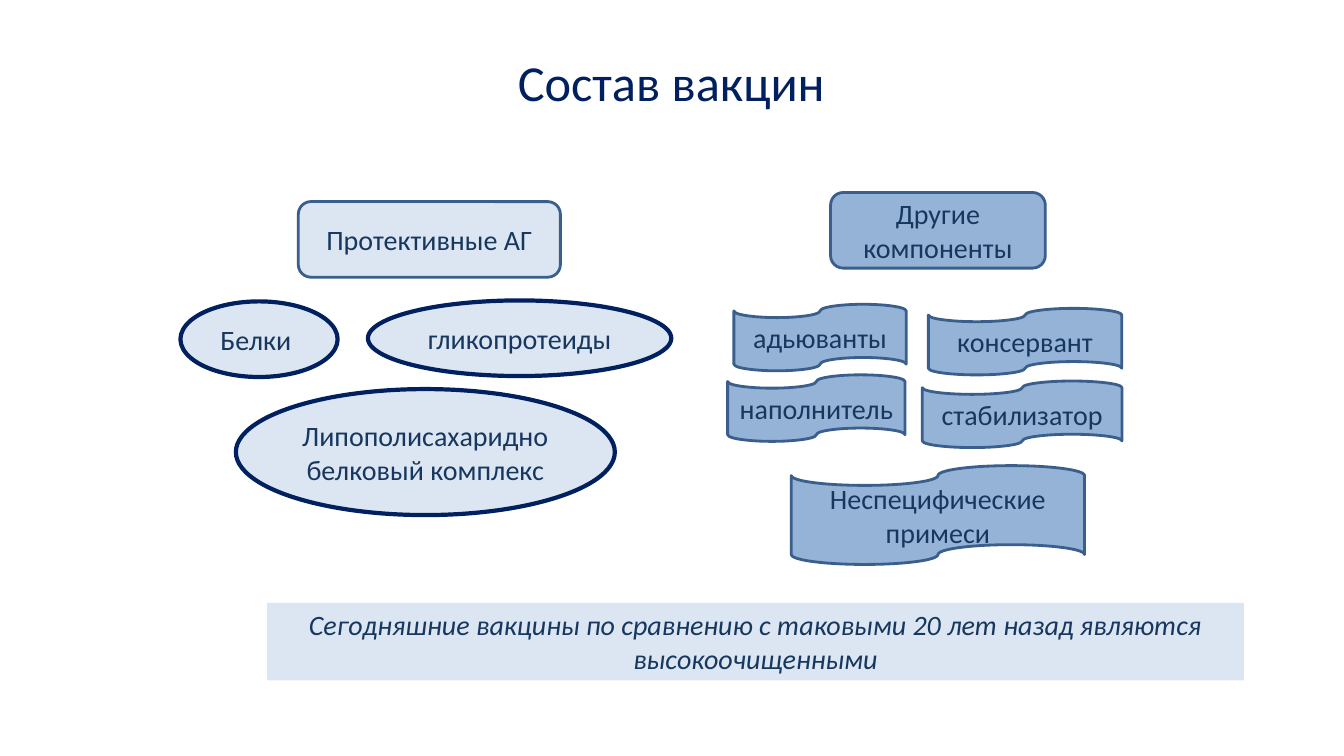
from pptx import Presentation
from pptx.util import Pt
from pptx.dml.color import RGBColor
from pptx.enum import shapes, text

NAVY = RGBColor(0x00, 0x20, 0x60)
INK = RGBColor(0x17, 0x37, 0x5E)
EDGE = RGBColor(0x3A, 0x5F, 0x8C)
PALE = RGBColor(0xDC, 0xE6, 0xF2)
BLUE = RGBColor(0x95, 0xB3, 0xD7)

KIND = shapes.MSO_SHAPE
MID = text.MSO_ANCHOR.MIDDLE
TOP = text.MSO_ANCHOR.TOP
BODY = {"name": "Calibri", "size": Pt(20)}
HEAD = {"name": "Calibri", "size": Pt(36)}

TITLE = ("Состав вакцин", (270.7, 25.9, 417.6, 64.1))
GROUPS = [
    (KIND.ROUNDED_RECTANGLE, PALE, EDGE, 2, [
        ("Протективные АГ", (213.1, 144, 187.2, 54)),
    ]),
    (KIND.ROUNDED_RECTANGLE, BLUE, EDGE, 2, [
        ("Другие компоненты", (593.3, 137.5, 153.4, 54)),
    ]),
    (KIND.OVAL, PALE, NAVY, 3, [
        ("Белки ", (128.9, 215.3, 112.3, 54)),
        ("гликопротеиды", (262.8, 214.6, 216.7, 54)),
        ("Липополисахаридно\vбелковый комплекс", (168.5, 277.9, 270.7, 90)),
    ]),
    (KIND.FLOWCHART_PUNCHED_TAPE, BLUE, EDGE, 2, [
        ("адьюванты", (524.2, 217.4, 123.1, 47.5)),
        ("консервант", (663.1, 220.3, 138.2, 47.5)),
        ("наполнитель", (519.8, 267.8, 126.7, 47.5)),
        ("стабилизатор", (658.8, 272.2, 142.6, 47.5)),
        ("Неспецифические примеси", (565.2, 332.6, 209.5, 70.6)),
    ]),
]
NOTE = ("Сегодняшние вакцины по сравнению с таковыми 20 лет назад "
        "являются высокоочищенными", (190.8, 430.6, 697.7, 55.4))


def write(shape, words, look, ink, anchor=MID):
    frame = shape.text_frame
    frame.text = words
    frame.word_wrap = True
    frame.vertical_anchor = anchor
    para = frame.paragraphs[0]
    para.alignment = text.PP_ALIGN.CENTER
    for run in para.runs:
        for key, value in look.items():
            setattr(run.font, key, value)
        run.font.color.rgb = ink


def draw(kind, box, fill, edge=None, width=0):
    shape = slide.shapes.add_shape(kind, *map(Pt, box))
    shape.shadow.inherit = False
    shape.fill.solid()
    shape.fill.fore_color.rgb = fill
    if edge is None:
        shape.line.fill.background()
    else:
        shape.line.color.rgb = edge
        shape.line.width = Pt(width)
    if kind == KIND.OVAL:
        shape.text_frame.margin_left = shape.text_frame.margin_right = 0
    return shape


deck = Presentation()
deck.slide_width, deck.slide_height = Pt(960), Pt(540)
slide = deck.slides.add_slide(deck.slide_layouts[5])

words, box = TITLE
title = slide.shapes.title
for key, value in zip(("left", "top", "width", "height"), box):
    setattr(title, key, Pt(value))
write(title, words, HEAD, NAVY)

for kind, fill, edge, width, items in GROUPS:
    for words, box in items:
        write(draw(kind, box, fill, edge, width), words, BODY, INK)

words, box = NOTE
write(draw(KIND.RECTANGLE, box, PALE), words, BODY | {"italic": True}, INK, TOP)

deck.save("out.pptx")
